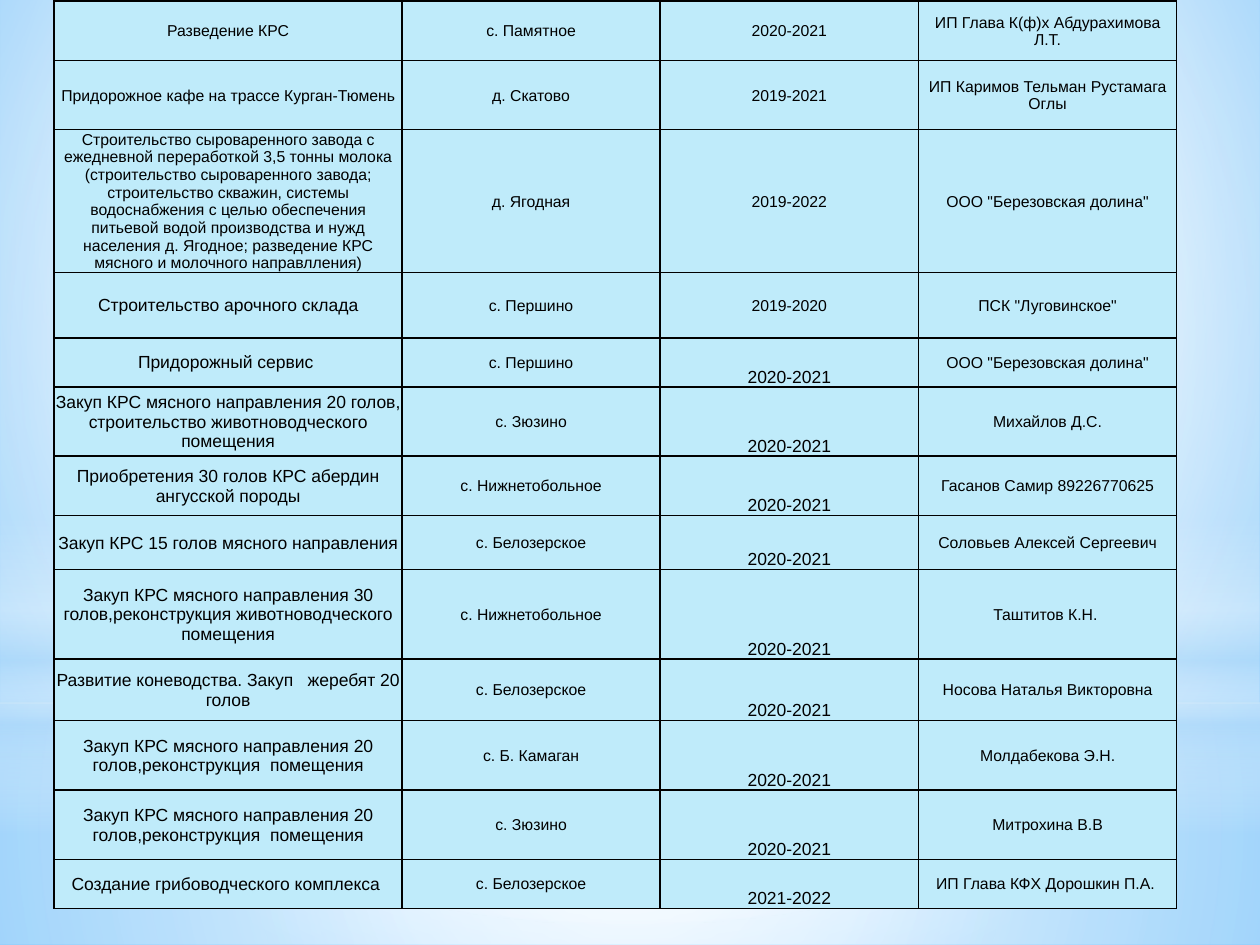
"""Builds a slide with a table of rural investment projects."""
import pptx
import pptx.dml.color
import pptx.enum.shapes
import pptx.enum.text
import pptx.oxml
import pptx.oxml.ns
import pptx.util

Inches = pptx.util.Inches
Pt = pptx.util.Pt
Shape = pptx.enum.shapes.MSO_SHAPE
Anchor = pptx.enum.text.MSO_ANCHOR

COLORS = {"text": "000000", "cell": "BFEBFA", "white": "FFFFFF", "mist": "B4DCFA",
          "sky": "9ED5FF", "deep": "5BB9FF"}
CENTER = (50, 50, 50, 50)
COLUMNS = [2.76, 2.05, 2.05, 2.05]
HEIGHTS = [0.47, 0.55, 1.02, 0.52, 0.39, 0.55, 0.47, 0.43, 0.71, 0.49, 0.55, 0.55, 0.39]
FIRST_LARGE_PROJECT = 3
FIRST_LARGE_YEARS = 4

PROJECTS = [
    ("Разведение КРС", "с. Памятное", "2020-2021", "ИП Глава К(ф)х Абдурахимова Л.Т."),
    ("Придорожное кафе на трассе Курган-Тюмень", "д. Скатово", "2019-2021",
     "ИП Каримов Тельман Рустамага Оглы"),
    ("Строительство сыроваренного завода с ежедневной переработкой 3,5 тонны молока "
     "(строительство сыроваренного завода; строительство скважин, системы водоснабжения "
     "с целью обеспечения питьевой водой производства и нужд населения д. Ягодное; "
     "разведение КРС мясного и молочного направлления)",
     "д. Ягодная", "2019-2022", "ООО \"Березовская долина\""),
    ("Строительство арочного склада", "с. Першино", "2019-2020", "ПСК \"Луговинское\""),
    ("Придорожный сервис ", "с. Першино", "2020-2021", "ООО \"Березовская долина\""),
    ("Закуп КРС мясного направления 20 голов, строительство животноводческого помещения",
     "с. Зюзино", "2020-2021", "Михайлов Д.С."),
    ("Приобретения 30 голов КРС абердин ангусской породы", "с. Нижнетобольное",
     "2020-2021", "Гасанов Самир 89226770625"),
    ("Закуп КРС 15 голов мясного направления", "c. Белозерское", "2020-2021",
     "Соловьев Алексей Сергеевич"),
    ("Закуп КРС мясного направления 30 голов,реконструкция животноводческого помещения",
     "с. Нижнетобольное", "2020-2021", "Таштитов К.Н. "),
    ("Развитие коневодства. Закуп   жеребят 20 голов", "c. Белозерское", "2020-2021",
     "Носова Наталья Викторовна"),
    ("Закуп КРС мясного направления 20 голов,реконструкция  помещения", "с. Б. Камаган",
     "2020-2021", "Молдабекова Э.Н."),
    ("Закуп КРС мясного направления 20 голов,реконструкция  помещения", "с. Зюзино",
     "2020-2021", "Митрохина В.В"),
    ("Создание грибоводческого комплекса ", "с. Белозерское", "2021-2022",
     "ИП Глава КФХ Дорошкин П.А. "),
]


class SlideBuilder:
    def __init__(self, slide, font="Arial"):
        self.slide = slide
        self.font = font

    def gradient(self, owner, fill, stops, focus=None):
        fill.gradient()
        element = owner.find(".//" + pptx.oxml.ns.qn("a:gradFill"))
        for child in list(element):
            element.remove(child)
        marks = "".join(
            f'<a:gs pos="{position * 1000}"><a:srgbClr val="{COLORS[color]}">'
            f'<a:alpha val="{opacity * 1000}"/></a:srgbClr></a:gs>'
            for position, color, opacity in stops)
        if focus:
            sides = " ".join(f'{side}="{value * 1000}"' for side, value in zip("ltrb", focus))
            direction = f'<a:path path="circle"><a:fillToRect {sides}/></a:path>'
        else:
            direction = '<a:lin ang="5400000" scaled="0"/>'
        source = pptx.oxml.parse_xml(
            f'<a:gradFill {pptx.oxml.ns.nsdecls("a")}>'
            f'<a:gsLst>{marks}</a:gsLst>{direction}</a:gradFill>')
        element.extend(list(source))

    def background(self, stops, focus):
        self.gradient(self.slide.element, self.slide.background.fill, stops, focus)

    def glow(self, kind, top, height, stops, focus=None):
        shape = self.slide.shapes.add_shape(kind, 0, Inches(top), Inches(10), Inches(height))
        shape.shadow.inherit = False
        shape.line.fill.background()
        self.gradient(shape.element, shape.fill, stops, focus)

    def borders(self, cell):
        properties = cell._tc.get_or_add_tcPr()
        for index, side in enumerate(("lnL", "lnR", "lnT", "lnB")):
            properties.insert(index, pptx.oxml.parse_xml(
                f'<a:{side} {pptx.oxml.ns.nsdecls("a")} w="12700"><a:solidFill>'
                f'<a:srgbClr val="{COLORS["text"]}"/></a:solidFill></a:{side}>'))

    def cell(self, cell, text, size, anchor):
        cell.fill.solid()
        cell.fill.fore_color.rgb = pptx.dml.color.RGBColor.from_string(COLORS["cell"])
        cell.margin_left = cell.margin_right = cell.margin_top = Inches(0.01)
        cell.margin_bottom = 0
        cell.vertical_anchor = anchor
        self.borders(cell)
        cell.text_frame.text = text
        para = cell.text_frame.paragraphs[0]
        para.alignment = pptx.enum.text.PP_ALIGN.CENTER
        font = para.runs[0].font
        font.name, font.size = self.font, Pt(size)
        font.color.rgb = pptx.dml.color.RGBColor.from_string(COLORS["text"])

    def table(self, left, top, rows):
        table = self.slide.shapes.add_table(
            len(rows), len(COLUMNS), Inches(left), Inches(top),
            Inches(sum(COLUMNS)), Inches(sum(HEIGHTS))).table
        for column, width in zip(table.columns, COLUMNS):
            column.width = Inches(width)
        for row_index, (row, height) in enumerate(zip(rows, HEIGHTS)):
            table.rows[row_index].height = Inches(height)
            for column_index, text in enumerate(row):
                large_years = column_index == 2 and row_index >= FIRST_LARGE_YEARS
                large_project = column_index == 0 and row_index >= FIRST_LARGE_PROJECT
                self.cell(table.cell(row_index, column_index), text,
                          10 if large_years or large_project else 9,
                          Anchor.BOTTOM if large_years else Anchor.MIDDLE)


def main():
    deck = pptx.Presentation()
    deck.slide_width, deck.slide_height = Inches(10), Inches(7.5)
    page = SlideBuilder(deck.slides.add_slide(deck.slide_layouts[6]))
    page.background([(0, "sky", 100), (60, "white", 100), (100, "deep", 100)],
                    (20, 10, 20, 60))
    page.glow(Shape.RECTANGLE, 5.58, 1.92,
              [(0, "white", 91), (37, "white", 76), (100, "mist", 79)], CENTER)
    page.glow(Shape.RECTANGLE, 0, 5.58,
              [(0, "white", 89), (48, "white", 62), (100, "mist", 79)], CENTER)
    page.glow(Shape.RECTANGLE, 4.12, 2.5,
              [(0, "white", 0), (29, "white", 30), (45, "mist", 40),
               (55, "white", 26), (65, "mist", 60), (100, "white", 0)])
    page.glow(Shape.OVAL, 1.75, 5.58, [(0, "white", 100), (56, "white", 0)], CENTER)
    page.table(0.43, 0.01, PROJECTS)
    deck.save("out.pptx")


if __name__ == "__main__":
    main()
